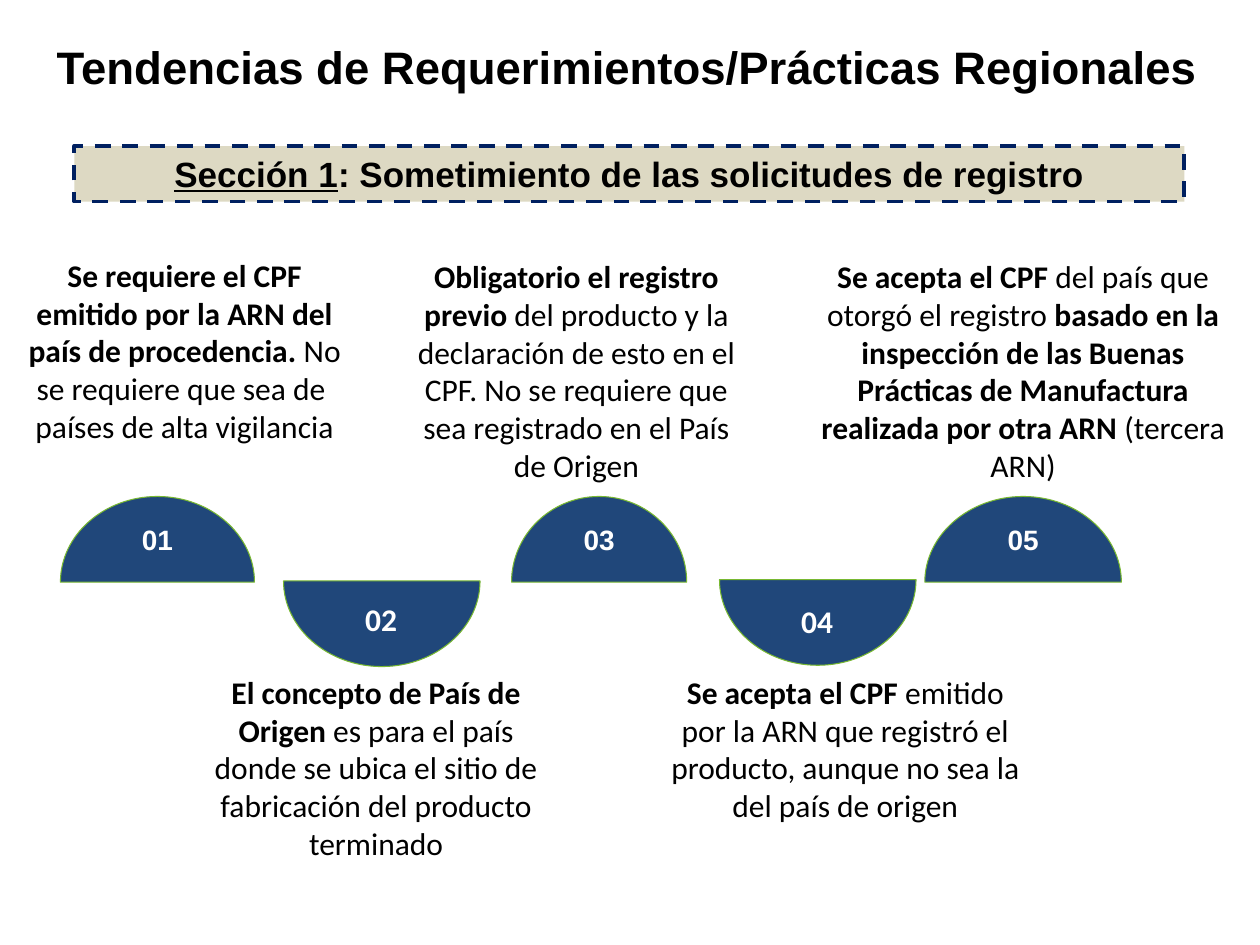
from dataclasses import dataclass

from lxml.etree import SubElement
from pptx import Presentation
from pptx.dml.color import RGBColor
from pptx.enum.dml import MSO_LINE
from pptx.enum.shapes import MSO_SHAPE
from pptx.enum.text import MSO_ANCHOR, MSO_AUTO_SIZE, PP_ALIGN
from pptx.oxml.ns import qn
from pptx.util import Inches, Pt


@dataclass(frozen=True)
class Theme:
    heading: str = "Arial"
    body: str = "Calibri"
    black: RGBColor = RGBColor(0x00, 0x00, 0x00)
    white: RGBColor = RGBColor(0xFF, 0xFF, 0xFF)
    banner: RGBColor = RGBColor(0xDD, 0xD9, 0xC3)
    banner_edge: RGBColor = RGBColor(0x00, 0x20, 0x60)
    dome: RGBColor = RGBColor(0x20, 0x47, 0x7A)
    dome_edge: RGBColor = RGBColor(0x78, 0xB8, 0x32)
    title_size: Pt = Pt(26)
    banner_size: Pt = Pt(20)
    body_size: Pt = Pt(18)
    number_size: Pt = Pt(16)


THEME = Theme()
TITLE_FONT = {"name": THEME.heading, "size": THEME.title_size, "bold": True}
BANNER_FONT = {"name": THEME.heading, "size": THEME.banner_size, "bold": True}
BODY_FONT = {"name": THEME.body, "size": THEME.body_size}
UPPER_NUMBER_FONT = {"name": THEME.heading, "size": THEME.number_size, "bold": True}
LOWER_NUMBER_FONT = {"name": THEME.body, "size": THEME.body_size, "bold": True}

BOLD = {"bold": True}
PLAIN = {"bold": False}
GROW = {"auto_size": MSO_AUTO_SIZE.SHAPE_TO_FIT_TEXT}
NO_INSETS = {"margin_left": 0, "margin_right": 0, "margin_top": 0, "margin_bottom": 0}
NARROW_INSETS = {**NO_INSETS, "margin_left": Inches(0.04), "margin_right": Inches(0.04)}
DOME_HEIGHT = 0.68
KAPPA = 0.55  # Bezier handle length for a quarter ellipse

# Each text: box, frame format, runs
STEP_TEXTS = [
    ((0.17, 2.03, 2.59, 1.44), NARROW_INSETS, [
        ("Se requiere el CPF emitido por la ARN del país de procedencia. ", BOLD),
        ("No se requiere que sea de  países de alta vigilancia", PLAIN)]),
    ((1.58, 5.29, 2.81, 1.62), GROW, [
        ("El concepto de País de Origen ", BOLD),
        ("es para el país donde se ubica el sitio de fabricación del producto "
         "terminado", PLAIN)]),
    ((3.17, 1.99, 2.81, 1.92), GROW, [
        ("Obligatorio el registro previo", BOLD),
        (" del producto y la declaración de esto en el CPF. No se requiere que "
         "sea registrado en el País de Origen", PLAIN)]),
    ((5.18, 5.29, 3.06, 1.31), GROW, [
        ("Se acepta el CPF ", BOLD),
        ("emitido por la ARN que registró el producto, aunque no sea la del país "
         "de origen", PLAIN)]),
    ((6.4, 1.99, 3.44, 1.92), GROW, [
        ("Se acepta el CPF ", BOLD),
        ("del país que otorgó el registro ", PLAIN),
        ("basado en la inspección de las Buenas Prácticas de Manufactura realizada "
         "por otra ARN ", BOLD),
        ("(tercera ARN)", PLAIN)]),
]

# Number, left, width
UPPER_DOMES = [("01", 0.48, 1.54), ("03", 4.06, 1.39), ("05", 7.34, 1.56)]
# Number, left, top, label top
LOWER_DOMES = [("02", 2.25, 4.61, 4.71), ("04", 5.71, 4.6, 4.73)]


def write_runs(shape, runs, font, color=THEME.black, align=PP_ALIGN.CENTER,
               **frame_format):
    """Fill a shape with one paragraph of formatted runs."""
    frame = shape.text_frame
    for key, value in {"word_wrap": True, **frame_format}.items():
        setattr(frame, key, value)
    paragraph = frame.paragraphs[0]
    paragraph.alignment = align
    for text, run_format in runs:
        run = paragraph.add_run()
        run.text = text
        run.font.color.rgb = color
        for key, value in {**font, **run_format}.items():
            setattr(run.font, key, value)


def paint(shape, fill, edge, edge_width):
    shape.shadow.inherit = False
    shape.fill.solid()
    shape.fill.fore_color.rgb = fill
    shape.line.color.rgb = edge
    shape.line.width = Pt(edge_width)


def add_text(slide, box, runs, font, **options):
    textbox = slide.shapes.add_textbox(*map(Inches, box))
    write_runs(textbox, runs, font, **options)


def add_banner(slide, box, runs):
    banner = slide.shapes.add_shape(MSO_SHAPE.RECTANGLE, *map(Inches, box))
    paint(banner, THEME.banner, THEME.banner_edge, 2.25)
    banner.line.dash_style = MSO_LINE.DASH
    write_runs(banner, runs, BANNER_FONT, vertical_anchor=MSO_ANCHOR.TOP, **GROW)


def add_dome(slide, box):
    """Draw the upper half of an ellipse that fills the box."""
    left, top, width, height = map(Inches, box)
    middle, right, bottom = left + width // 2, left + width, top + height
    builder = slide.shapes.build_freeform(left, bottom)
    builder.add_line_segments([(middle, top), (right, bottom)], close=True)
    dome = builder.convert_to_shape()
    paint(dome, THEME.dome, THEME.dome_edge, 0.6)

    # Bend the two straight sides into quarter ellipses
    half = width // 2
    rise, reach = int(height * (1 - KAPPA)), int(half * KAPPA)
    quarters = [
        [(0, rise), (half - reach, 0), (half, 0)],
        [(half + reach, 0), (width, rise), (width, height)],
    ]
    sides = list(dome.element.iter(qn("a:lnTo")))
    for side, points in zip(sides, quarters):
        curve = side.makeelement(qn("a:cubicBezTo"))
        for x, y in points:
            SubElement(curve, qn("a:pt"), x=str(x), y=str(y))
        side.getparent().replace(side, curve)
    return dome


def add_upper_dome(slide, number, left, width):
    dome = add_dome(slide, (left, 3.94, width, DOME_HEIGHT))
    write_runs(dome, [(number, {})], UPPER_NUMBER_FONT, THEME.white,
               vertical_anchor=MSO_ANCHOR.MIDDLE, **NO_INSETS)


def add_lower_dome(slide, number, left, top, label_top):
    dome = add_dome(slide, (left, top, 1.56, DOME_HEIGHT))
    dome.rotation = 180
    add_text(slide, (left + 0.55, label_top, 0.46, 0.4), [(number, {})],
             LOWER_NUMBER_FONT, color=THEME.white, align=PP_ALIGN.LEFT,
             word_wrap=False, **GROW)


def main():
    presentation = Presentation()
    presentation.slide_width = Inches(10)
    presentation.slide_height = Inches(7.5)
    slide = presentation.slides.add_slide(presentation.slide_layouts[6])

    # Title
    add_text(slide, (-0.02, 0.3, 10, 0.45),
             [("Tendencias de Requerimientos/Prácticas Regionales", {})],
             TITLE_FONT, vertical_anchor=MSO_ANCHOR.MIDDLE)

    # Texts above and below the chain
    for box, frame_format, runs in STEP_TEXTS:
        add_text(slide, box, runs, BODY_FONT, **frame_format)

    # Section banner
    add_banner(slide, (0.59, 1.16, 8.81, 0.44), [
        ("Sección 1", {"underline": True}),
        (": Sometimiento de las solicitudes de registro", {})])

    # Alternating chain of numbered domes
    for upper_dome in UPPER_DOMES:
        add_upper_dome(slide, *upper_dome)
    for lower_dome in LOWER_DOMES:
        add_lower_dome(slide, *lower_dome)

    presentation.save("out.pptx")


if __name__ == "__main__":
    main()
